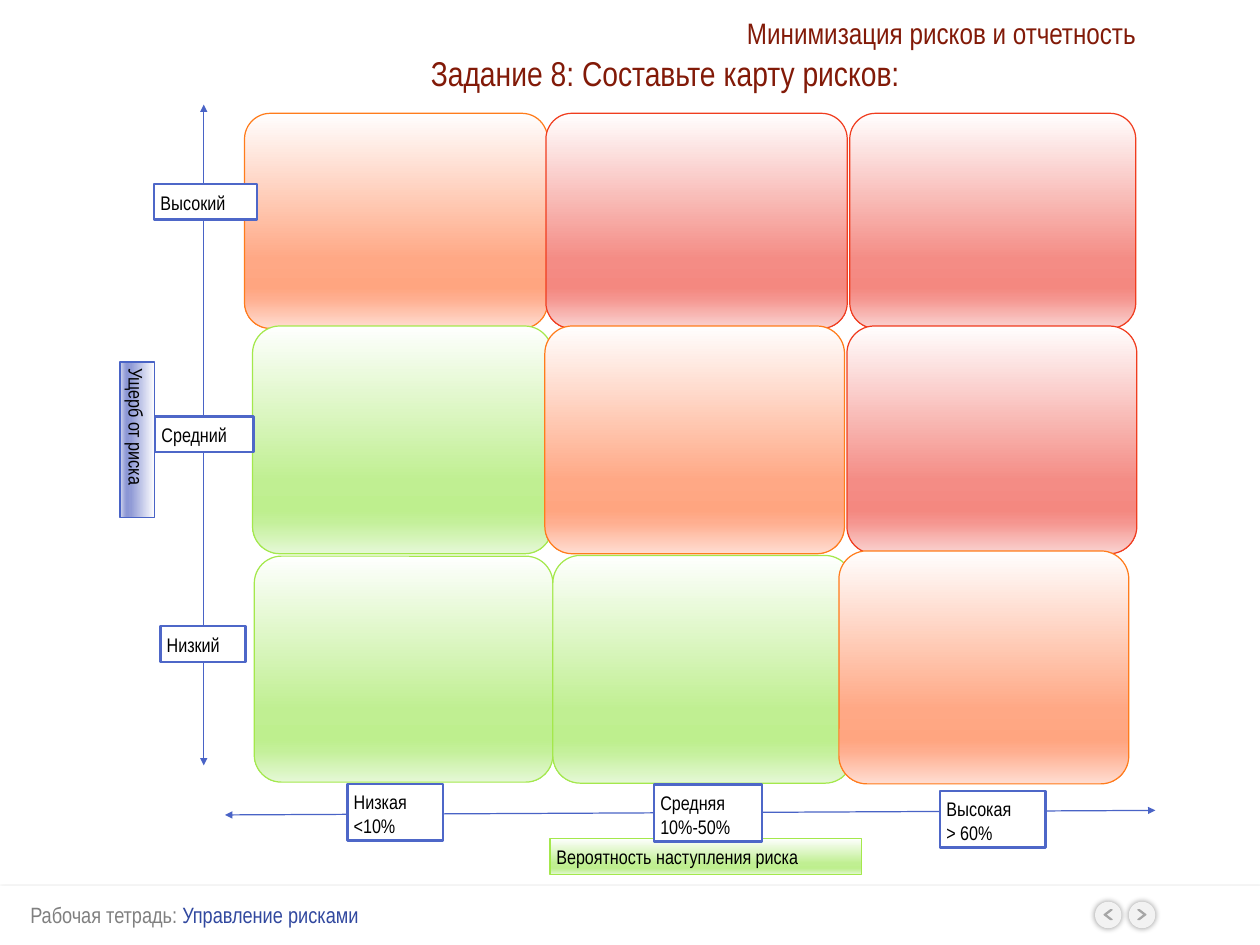
from dataclasses import dataclass
from lxml.etree import SubElement
from pptx import Presentation
from pptx.dml.color import RGBColor
from pptx.enum.shapes import MSO_CONNECTOR as Link, MSO_SHAPE as Form
from pptx.enum.text import MSO_ANCHOR as Anchor, MSO_AUTO_SIZE as Fit, PP_ALIGN as Align
from pptx.oxml.ns import qn
from pptx.util import Cm, Pt


@dataclass(frozen=True)
class Theme:
    font: str = "Arial Narrow"
    title: int = 28
    topic: int = 24
    foot: int = 18
    label: int = 16
    ink: str = "000000"
    rust: str = "821A08"
    gray: str = "808080"
    navy: str = "31489F"
    white: str = "FFFFFF"
    disc: str = "F2F2F2"
    arrow: str = "A6A6A6"
    axis: str = "4963C6"
    frame: str = "4E67C8"
    stops: tuple = (0, 68, 81, 86, 100)
    # Each tint: line colour, then the colours at the stops
    green: tuple = ("A4E84C", "FEFFFE", "C0EF92", "BEEF8E", "C4F09A", "E5F8D6")
    amber: tuple = ("FF7C1B", "FFFEFE", "FFA885", "FFA580", "FFAE8F", "FFDDD2")
    red: tuple = ("F03C1E", "FFFEFE", "F48C85", "F48880", "F5958F", "FAD4D2")
    blue: tuple = ("4963C6", "FEFEFF", "919BD6", "8C97D5", "99A2D9", "D5D9ED")


@dataclass(frozen=True)
class Box:
    """Area in centimetres."""
    x: float
    y: float
    w: float
    h: float

    def sub(self, x, y, w, h):
        """Return an area offset from this one's corner."""
        return Box(self.x + x, self.y + y, w, h)

    def size(self):
        return Cm(self.x), Cm(self.y), Cm(self.w), Cm(self.h)


T = Theme()
WIDE, HIGH = 36.12, 27.1


def rgb(code):
    return RGBColor.from_string(code)


def write(shape, *lines, size=T.label, color=T.ink, align=Align.LEFT, wrap=True, fit=Fit.NONE):
    """Fill a shape with lines; a line is a string or (text, colour) pairs."""
    frame = shape.text_frame
    frame.word_wrap, frame.auto_size = wrap, fit
    frame.vertical_anchor = Anchor.TOP
    frame.margin_left = frame.margin_right = Cm(0.18)
    frame.margin_top = frame.margin_bottom = Cm(0.18)
    for i, line in enumerate(lines):
        para = frame.add_paragraph() if i else frame.paragraphs[0]
        para.alignment = align
        for text, tone in [(line, color)] if isinstance(line, str) else line:
            run = para.add_run()
            run.text = text
            run.font.name, run.font.size = T.font, Pt(size)
            run.font.color.rgb = rgb(tone)


def draw(slide, form, box, fill, line=None, width=1):
    shape = slide.shapes.add_shape(form, *box.size())
    shape.shadow.inherit = False
    shape.fill.solid()
    shape.fill.fore_color.rgb = rgb(fill)
    if line:
        shape.line.color.rgb = rgb(line)
        shape.line.width = Pt(width)
    else:
        shape.line.fill.background()
    return shape


def shade(slide, form, box, tint):
    """Draw a shape with a vertical gradient."""
    line, *tones = tint
    shape = draw(slide, form, box, T.white, line)
    shape.fill.gradient()
    shape.fill.gradient_angle = 270
    stops = shape.element.spPr.find(qn("a:gradFill")).find(qn("a:gsLst"))
    for old in list(stops):
        stops.remove(old)
    for place, tone in zip(T.stops, tones):
        stop = SubElement(stops, qn("a:gs"), pos=str(place * 1000))
        SubElement(stop, qn("a:srgbClr"), val=tone)
    return shape


def glow(shape, alpha, blur, dist):
    """Add a soft black shadow, falling downwards."""
    effect = shape.element.spPr.find(qn("a:effectLst"))
    cast = SubElement(effect, qn("a:outerShdw"), blurRad=str(Pt(blur)),
                      dist=str(Pt(dist)), dir="5400000", rotWithShape="0")
    tone = SubElement(cast, qn("a:srgbClr"), val=T.ink)
    SubElement(tone, qn("a:alpha"), val=str(alpha * 1000))


def arrow(slide, x1, y1, x2, y2):
    """Draw a line with a head at each end."""
    link = slide.shapes.add_connector(Link.STRAIGHT, Cm(x1), Cm(y1), Cm(x2), Cm(y2))
    link.line.color.rgb = rgb(T.axis)
    link.line.width = Pt(1)
    props = link.element.spPr
    for end in ("a:headEnd", "a:tailEnd"):
        SubElement(props.find(qn("a:ln")), qn(end), type="triangle")
    SubElement(props, qn("a:effectLst"))


def label(slide, box, *lines):
    write(draw(slide, Form.RECTANGLE, box, T.white, T.frame, 2), *lines)


def footer(slide, box):
    glow(draw(slide, Form.RECTANGLE, box, T.white), 35, 3, 1.8)
    for x, turn in ((31.39, 180), (32.36, 0)):
        spot = box.sub(x, 0.46, 0.76, 0.76)
        glow(draw(slide, Form.OVAL, spot, T.disc), 40, 5, 0)
        mark = draw(slide, Form.CHEVRON, spot.sub(0.26, 0.23, 0.23, 0.28), T.arrow, T.arrow)
        mark.adjustments[0] = 0.79
        mark.rotation = turn
    note = slide.shapes.add_textbox(*box.sub(0.69, 0.28, 9.91, 1.09).size())
    write(note, [("Рабочая тетрадь: ", T.gray), ("Управление рисками", T.navy)],
          size=T.foot, wrap=False, fit=Fit.SHAPE_TO_FIT_TEXT)


def header(slide, box):
    title = slide.shapes.title
    title.left, title.top, title.width, title.height = box.sub(0, 1.07, 14.33, 1.5).size()
    write(title, "Задание 8: Составьте карту рисков:", size=T.title,
          color=T.rust, wrap=False, fit=Fit.SHAPE_TO_FIT_TEXT)
    topic = slide.shapes.add_textbox(*box.sub(8.07, 0, 12.5, 1.32).size())
    write(topic, "Минимизация рисков и отчетность", size=T.topic, color=T.rust,
          align=Align.RIGHT, wrap=False, fit=Fit.SHAPE_TO_FIT_TEXT)


def matrix(slide, box):
    cells = (
        (T.amber, 0, 0, 8.69, 6.17), (T.red, 8.64, 0, 8.64, 6.17),
        (T.red, 17.35, 0, 8.2, 6.17),
        (T.green, 0.23, 6.1, 8.59, 6.53), (T.amber, 8.61, 6.1, 8.59, 6.53),
        (T.red, 17.27, 6.1, 8.31, 6.53),
        (T.green, 0.28, 12.7, 8.56, 6.48), (T.green, 8.84, 12.68, 8.59, 6.53),
        (T.amber, 17.04, 12.55, 8.31, 6.68),
    )
    for tint, *place in cells:
        cell = shade(slide, Form.ROUNDED_RECTANGLE, box.sub(*place), tint)
        cell.adjustments[0] = 0.12


def damage(slide, box):
    x = box.x + 4.14
    arrow(slide, x, box.y, x, box.y + box.h)
    tag = shade(slide, Form.RECTANGLE, box.sub(0, 9.12, 4.47, 0.99), T.blue)
    tag.rotation = 90
    write(tag, "Ущерб от риска")
    levels = (("Высокий", 2.72, 2.28, 2.95), ("Средний", 2.75, 8.94, 2.82),
              ("Низкий", 2.9, 14.96, 2.44))
    for name, left, top, width in levels:
        label(slide, box.sub(left, top, width, 1.02), name)


def chance(slide, box):
    tag = shade(slide, Form.RECTANGLE, box.sub(9.32, 1.57, 8.92, 1.04), T.green)
    write(tag, "Вероятность наступления риска")
    arrow(slide, box.x, box.y + 0.89, box.x + box.w, box.y + 0.76)
    levels = (("Низкая", "<10%", 3.51, 0, 2.74), ("Средняя", "10%-50%", 12.3, 0.02, 3.1),
              ("Высокая", "> 60%", 20.5, 0.2, 3.02))
    for name, share, left, top, width in levels:
        label(slide, box.sub(left, top, width, 1.63), name, share)


def main():
    deck = Presentation()
    deck.slide_width, deck.slide_height = Cm(WIDE), Cm(HIGH)
    slide = deck.slides.add_slide(deck.slide_layouts[5])
    footer(slide, Box(0, 25.4, WIDE, 1.7))
    header(slide, Box(12.17, 0.25, 20.57, 2.57))
    matrix(slide, Box(7.01, 3.25, 25.58, 19.23))
    damage(slide, Box(1.7, 3, 5.67, 18.95))
    chance(slide, Box(6.45, 22.48, 26.67, 2.61))
    deck.save("out.pptx")


if __name__ == "__main__":
    main()
